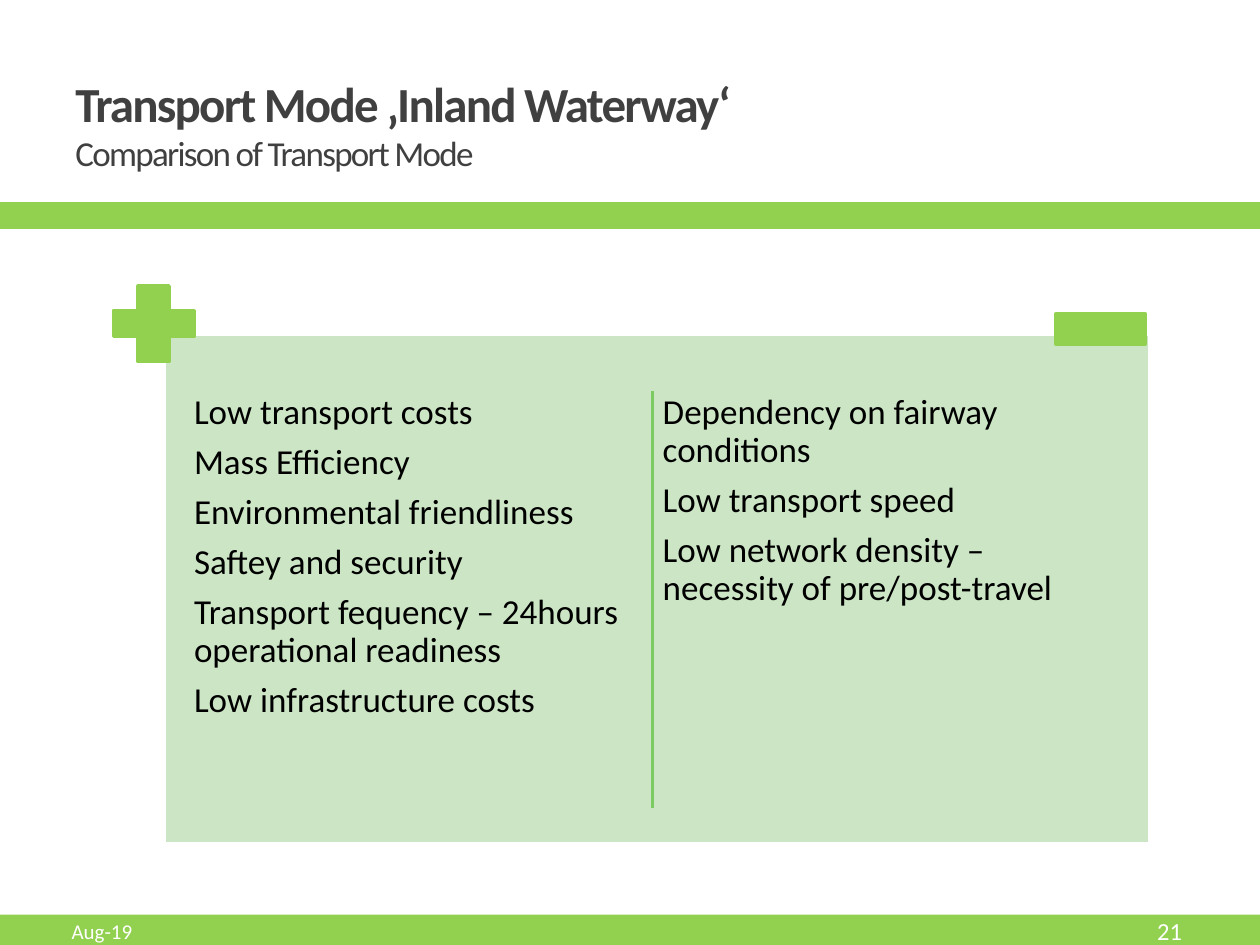
from lxml import etree
from pptx import Presentation
from pptx import util as u
from pptx.dml import color
from pptx.enum import shapes, text
from pptx.oxml import ns

GREEN, PALE, RULE, WHITE = "92D050", "CCE6C5", "7CCA62", "FFFFFF"
DARK, BLACK = "404040", "000000"
PROS = ["Low transport costs", "Mass Efficiency", "Environmental friendliness",
        "Saftey and security", "Transport fequency – 24hours operational readiness",
        "Low infrastructure costs"]
CONS = ["Dependency on fairway conditions", "Low transport speed",
        "Low network density – necessity of pre/post-travel"]


def rgb(value):
    """Turn a hex string into a colour."""
    return color.RGBColor.from_string(value)


def inches(box):
    """Turn a box of numbers into lengths."""
    return [u.Inches(n) for n in box]


def add_block(s, box, fill, line=None, kind=shapes.MSO_SHAPE.RECTANGLE):
    """Add a filled preset shape with an optional outline."""
    sp = s.shapes.add_shape(kind, *inches(box))
    sp.shadow.inherit = False
    sp.fill.solid()
    sp.fill.fore_color.rgb = rgb(fill)
    if line:
        sp.line.color.rgb = rgb(line)
        sp.line.width = u.Pt(2.08)
    else:
        sp.line.fill.background()
    return sp


def add_frame(s, box, inset=None, middle=False):
    """Add a wrapping text box and return its text frame."""
    tf = s.shapes.add_textbox(*inches(box)).text_frame
    tf.word_wrap = True
    if inset is not None:
        tf.margin_left = tf.margin_right = u.Inches(inset)
        tf.margin_top = tf.margin_bottom = u.Inches(inset)
    if middle:
        tf.vertical_anchor = text.MSO_ANCHOR.MIDDLE
    return tf


def add_run(p, words, size, hue, bold=False, spacing=None):
    """Add a formatted run to a paragraph."""
    r = p.add_run()
    r.text = words
    r.font.name = "Calibri"
    r.font.size = u.Pt(size)
    r.font.bold = bold
    r.font.color.rgb = rgb(hue)
    if spacing is not None:
        r.font._element.set("spc", str(spacing * 100))


def add_header(s, x, y, w, h):
    """Place the title, its subtitle and the green band below them."""
    p = add_frame(s, (x + 0.5, y + 0.44, 6, 1.08), middle=True).paragraphs[0]
    add_run(p, "Transport Mode ‚Inland Waterway‘", 28, DARK, bold=True, spacing=-1)
    p.add_line_break()
    add_run(p, "Comparison of Transport Mode", 20, DARK, spacing=-1)
    add_block(s, (x, y + h - 0.18, w, 0.18), GREEN, GREEN)


def add_list(s, box, items):
    """Place one column of arguments."""
    tf = add_frame(s, box, inset=0.04)
    for i, item in enumerate(items):
        p = tf.add_paragraph() if i else tf.paragraphs[0]
        p.line_spacing = 0.9
        p.space_after = u.Pt(7)
        add_run(p, item, 20, BLACK)


def add_divider(s, x, top, bottom):
    """Draw the vertical rule between the columns."""
    line = s.shapes.add_connector(shapes.MSO_CONNECTOR.STRAIGHT,
                                  *inches((x, top, x, bottom)))
    line.line.color.rgb = rgb(RULE)
    line.line.width = u.Pt(2.08)
    etree.SubElement(line._element.spPr, ns.qn("a:effectLst"))


def add_comparison(s, x, y, w, h):
    """Place the panel with its two lists, signs and divider."""
    add_block(s, (x, y, w, h), PALE, WHITE)
    for left, items in ((0.2, PROS), (3.92, CONS)):
        add_list(s, (x + left, y + 0.44, 3.64, 3.46), items)
    plus = add_block(s, (x - 0.4, y - 0.38, 0.64, 0.6), GREEN, GREEN,
                     shapes.MSO_SHAPE.CROSS)
    plus.adjustments[0] = 0.33
    add_block(s, (x + w - 0.75, y - 0.16, 0.71, 0.24), GREEN, GREEN)
    add_divider(s, x + 3.88, y + 0.45, y + 3.76)


def add_footer(s, x, y, w, h):
    """Place the bottom band with date and page number."""
    add_block(s, (x, y, w, h), GREEN)
    date = add_frame(s, (x + 0.47, y - 0.05, 3.17, 0.36), middle=True).paragraphs[0]
    add_run(date, "Aug-19", 12, WHITE)
    page = add_frame(s, (x + w - 1.69, y - 0.05, 1.17, 0.36), middle=True).paragraphs[0]
    page.alignment = text.PP_ALIGN.RIGHT
    add_run(page, "21", 14, WHITE)


def main():
    """Build the slide and save it."""
    prs = Presentation()
    prs.slide_width, prs.slide_height = u.Inches(10), u.Inches(7.5)
    s = prs.slides.add_slide(prs.slide_layouts[6])
    add_header(s, 0, 0, 10, 1.8)
    add_comparison(s, 1.3, 2.65, 7.83, 4.05)
    add_footer(s, 0, 7.26, 10, 0.24)
    prs.save("out.pptx")


if __name__ == "__main__":
    main()
